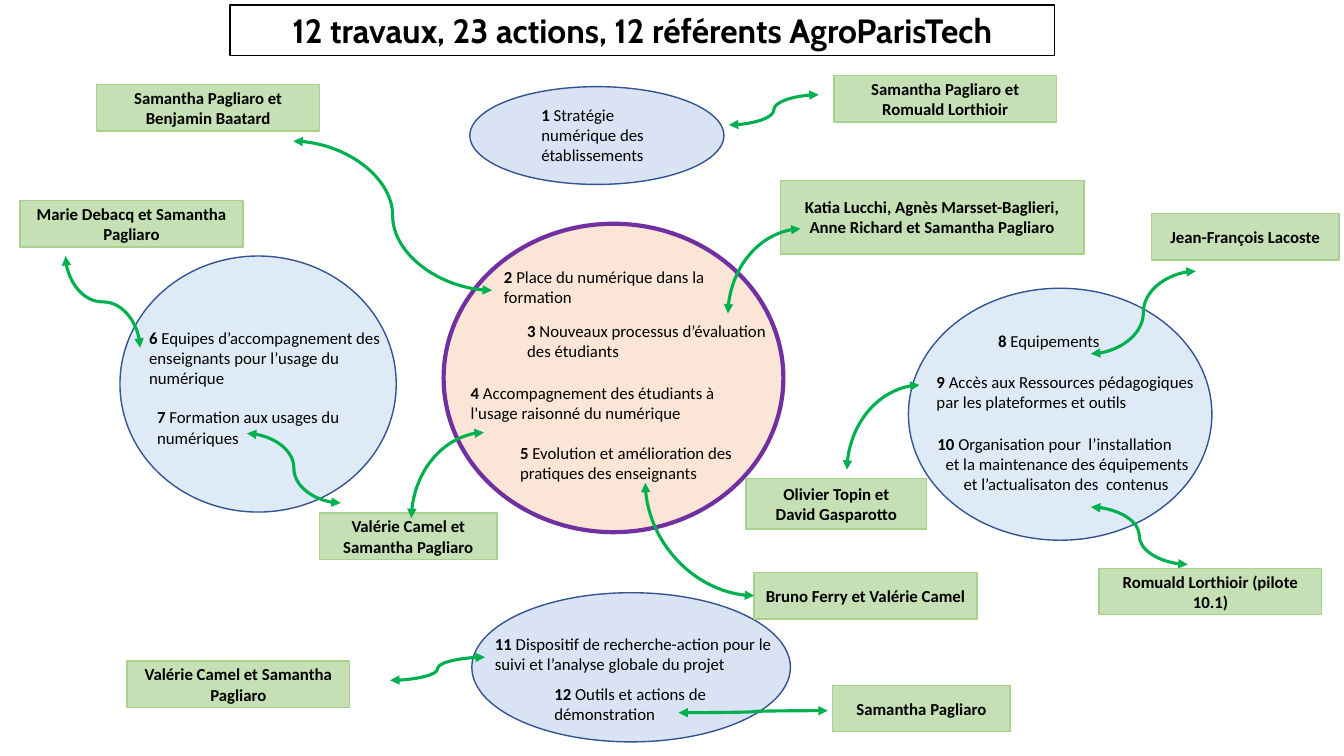
from lxml import etree
from pptx import Presentation
from pptx import util as u
from pptx.dml.color import RGBColor
from pptx.enum import shapes, text
from pptx.oxml import ns

BLUE, PALE, PEACH = "DAE3F3", "DEEBF7", "FBE5D6"
NAVY, PURPLE = "325491", "7030A0"

THEMES = [
    (4.4, 2.22, 3.37, 3.06, PEACH, PURPLE, 3),
    (4.66, 0.86, 2.52, 0.97, BLUE, NAVY, 1),
    (4.68, 5.88, 3.16, 1.48, BLUE, NAVY, 1),
    (9.01, 2.86, 3.01, 2.5, PALE, NAVY, 1),
    (1.19, 2.54, 2.74, 2.54, PALE, NAVY, 1),
]
TASKS = [
    (4.57, 3.75, 2.8, 0.5, ["4| Accompagnement des étudiants à l'usage raisonné du numérique"]),
    (5.06, 4.34, 2.4, 0.5, ["5| Evolution et amélioration des pratiques des enseignants"]),
    (5.27, 0.99, 1.69, 0.47, ["1| Stratégie numérique des établissements"]),
    (4.81, 6.24, 3.11, 0.56, ["11| Dispositif de recherche-action pour le suivi et l’analyse globale du projet"]),
    (5.4, 6.73, 2.44, 0.56, ["12| Outils et actions de démonstration"]),
    (4.9, 2.6, 2.29, 0.63, ["2| Place du numérique dans la formation"]),
    (5.13, 3.13, 2.78, 0.63, ["3| Nouveaux processus d’évaluation", "|des étudiants"]),
    (1.46, 3.99, 2.22, 0.5, ["7| Formation aux usages du numériques"]),
    (1.38, 3.2, 2.79, 0.71, ["6| Equipes d’accompagnement des enseignants pour l’usage du numérique"]),
    (9.8, 3.23, 2.22, 0.28, ["8| Equipements"]),
    (9.19, 3.64, 2.8, 0.5, ["9| Accès aux Ressources pédagogiques par les plateformes et outils"]),
    (9.2, 4.25, 2.8, 0.71, ["10| Organisation pour  l’installation",
                            "|et la maintenance des équipements",
                            "|et l’actualisaton des  contenus"], (0, 0.08, 0.26)),
]
REFERENTS = [
    (8.27, 0.75, 2.21, 0.46, ["Samantha Pagliaro et Romuald Lorthioir"]),
    (7.74, 1.79, 3.01, 0.73, ["Katia Lucchi, Agnès Marsset-Baglieri, Anne Richard et Samantha Pagliaro"]),
    (11.42, 2.12, 1.86, 0.46, ["Jean-François Lacoste"]),
    (10.9, 5.64, 2.21, 0.46, ["Romuald Lorthioir (pilote 10.1)"]),
    (7.4, 4.75, 1.79, 0.5, ["Olivier Topin et", "David Gasparotto"]),
    (8.26, 6.8, 1.76, 0.46, ["Samantha Pagliaro"]),
    (1.26, 6.56, 2.21, 0.46, ["Valérie Camel et Samantha Pagliaro"]),
    (0.2, 1.99, 2.21, 0.46, ["Marie Debacq et Samantha Pagliaro"]),
    (7.48, 5.68, 2.21, 0.46, ["Bruno Ferry et Valérie Camel"]),
    (0.96, 0.84, 2.21, 0.46, ["Samantha Pagliaro et Benjamin Baatard"]),
    (3.17, 5.09, 1.76, 0.46, ["Valérie Camel et Samantha Pagliaro"]),
]
S_CURVES = [
    (3.87, 6.75, 4.81, 6.52),
    (7.23, 1.24, 8.12, 0.94),
    (10.82, 3.51, 11.86, 2.69),
    (2.91, 1.4, 4.88, 2.88),
    (10.82, 5.03, 11.78, 5.6),
    (2.45, 4.3, 3.38, 4.99),
    (8.21, 7.05, 6.73, 7.07),
]
QUARTER_CURVES = [
    (9.12, 3.82, 8.4, 4.66),
    (7.94, 2.27, 7.22, 3.11),
    (7.48, 5.91, 6.4, 4.79),
    (4.8, 4.29, 4.08, 5.14),
]


def color(hex_value):
    return RGBColor.from_string(hex_value)


def write(frame, lines, size=12, font="Calibri", align=text.PP_ALIGN.LEFT, indents=()):
    for index, line in enumerate(lines):
        paragraph = frame.paragraphs[0] if index == 0 else frame.add_paragraph()
        paragraph.alignment = align
        if indents:
            paragraph._p.get_or_add_pPr().set("marL", str(u.Inches(indents[index])))
        strong, _, plain = line.partition("|")
        for words, bold in ((strong, True), (plain, False)):
            if words:
                run = paragraph.add_run()
                run.text = words
                run.font.size = u.Pt(size)
                run.font.name = font
                run.font.bold = bold
                run.font.color.rgb = color("000000")


class Board:
    arrow_color = "00B050"
    label_fill = "C5E0B4"
    label_line = "A9D18E"

    def __init__(self, slide):
        self.shapes = slide.shapes

    def outline(self, kind, x, y, w, h, fill, line, weight):
        shape = self.shapes.add_shape(kind, *map(u.Inches, (x, y, w, h)))
        shape.shadow.inherit = False
        shape.fill.solid()
        shape.fill.fore_color.rgb = color(fill)
        shape.line.color.rgb = color(line)
        shape.line.width = u.Pt(weight)
        return shape

    def title(self, x, y, w, h, words):
        banner = self.outline(shapes.MSO_SHAPE.RECTANGLE, x, y, w, h, "FFFFFF", "000000", 1)
        banner.text_frame.word_wrap = False
        banner.text_frame.vertical_anchor = text.MSO_ANCHOR.TOP
        write(banner.text_frame, [words], size=24, font="Cabin", align=text.PP_ALIGN.CENTER)

    def theme(self, *geometry_and_style):
        self.outline(shapes.MSO_SHAPE.OVAL, *geometry_and_style)

    def task(self, x, y, w, h, lines, indents=()):
        frame = self.shapes.add_textbox(*map(u.Inches, (x, y, w, h))).text_frame
        frame.word_wrap = True
        frame.auto_size = text.MSO_AUTO_SIZE.SHAPE_TO_FIT_TEXT
        write(frame, lines, indents=indents)

    def referent(self, x, y, w, h, lines):
        label = self.outline(shapes.MSO_SHAPE.RECTANGLE, x, y, w, h,
                             self.label_fill, self.label_line, 1)
        label.text_frame.word_wrap = True
        label.text_frame.vertical_anchor = text.MSO_ANCHOR.MIDDLE
        write(label.text_frame, lines, align=text.PP_ALIGN.CENTER)

    def arrow(self, x1, y1, x2, y2, quarter=False):
        link = self.shapes.add_connector(shapes.MSO_CONNECTOR.CURVE,
                                         *map(u.Inches, (x1, y1, x2, y2)))
        link.line.color.rgb = color(self.arrow_color)
        link.line.width = u.Pt(2.25)
        properties = link.element.spPr
        stroke = properties.find(ns.qn("a:ln"))
        for end in ("a:headEnd", "a:tailEnd"):
            etree.SubElement(stroke, ns.qn(end), type="triangle")
        etree.SubElement(properties, ns.qn("a:effectLst"))
        if quarter:
            properties.find(ns.qn("a:prstGeom")).set("prst", "curvedConnector2")
        return link

    def upright_arrow(self, x1, y1, x2, y2):
        middle_x, middle_y = (x1 + x2) / 2, (y1 + y2) / 2
        half_w, half_h = (y2 - y1) / 2, (x2 - x1) / 2
        link = self.arrow(middle_x + half_w, middle_y - half_h,
                          middle_x - half_w, middle_y + half_h)
        link.element.spPr.find(ns.qn("a:xfrm")).set("rot", str(270 * 60000))


def main():
    deck = Presentation()
    deck.slide_width, deck.slide_height = u.Inches(13.33), u.Inches(7.5)
    board = Board(deck.slides.add_slide(deck.slide_layouts[6]))
    board.title(2.28, 0.05, 8.18, 0.5, "12 travaux, 23 actions, 12 référents AgroParisTech")
    for theme in THEMES:
        board.theme(*theme)
    for task in TASKS:
        board.task(*task)
    for referent in REFERENTS:
        board.referent(*referent)
    board.upright_arrow(0.65, 2.54, 1.39, 3.45)
    for ends in S_CURVES:
        board.arrow(*ends)
    for ends in QUARTER_CURVES:
        board.arrow(*ends, quarter=True)
    deck.save("out.pptx")


if __name__ == "__main__":
    main()
